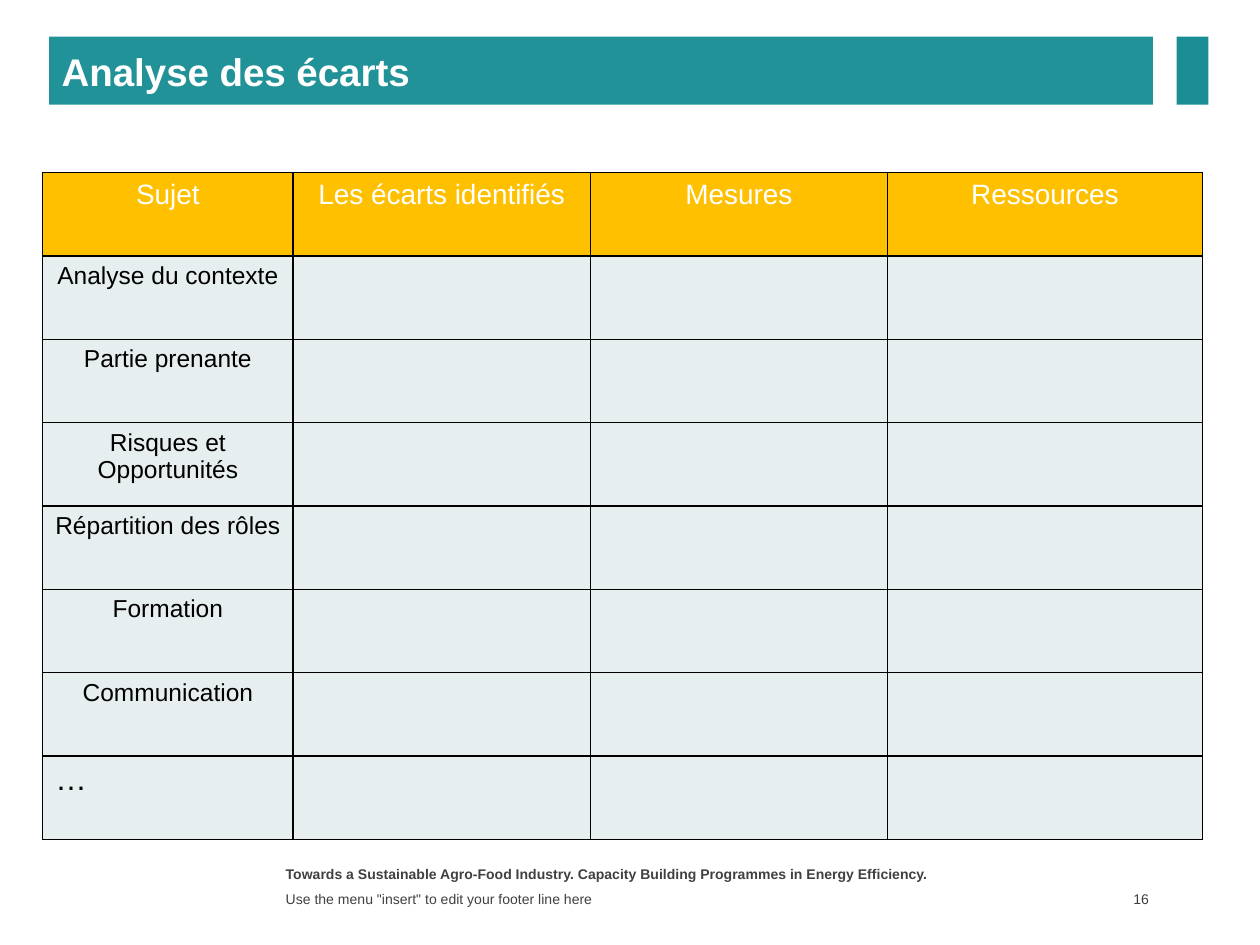
from lxml.etree import SubElement
from pptx import Presentation
from pptx.dml.color import RGBColor
from pptx.enum.shapes import MSO_SHAPE
from pptx.enum.text import MSO_ANCHOR, MSO_AUTO_SIZE, PP_ALIGN
from pptx.oxml.ns import qn
from pptx.util import Cm, Pt

TITLE = "Analyse des écarts"
HEADERS = ["Sujet", "Les écarts identifiés", "Mesures", "Ressources"]
SUBJECTS = ["Analyse du contexte", "Partie prenante", "Risques et Opportunités",
            "Répartition des rôles", "Formation", "Communication", "…"]
FOOTERS = [  # text, (left, top, width, height) in cm, bold, anchor, alignment, right inset
    ("Towards a Sustainable Agro-Food Industry. Capacity Building Programmes in Energy Efficiency.",
     (5.51, 17.32, 13.97, 0.53), True, MSO_ANCHOR.TOP, PP_ALIGN.LEFT, 0.25),
    ('Use the menu "insert" to edit your footer line here',
     (5.51, 17.88, 13.97, 0.48), False, MSO_ANCHOR.MIDDLE, PP_ALIGN.LEFT, 0.25),
    ("16", (21.84, 17.86, 1.42, 0.51), False, MSO_ANCHOR.MIDDLE, PP_ALIGN.RIGHT, 0.1),
]
BAND_TOP, BAND_HEIGHT = 0.74, 1.37
TABLE_LEFT, TABLE_TOP, ROW_HEIGHT = 0.86, 3.48, 1.68
COLUMN_WIDTHS = [5.05, 5.99, 5.99, 6.35]

FORMATS = {
    "title": {"size": Pt(22), "bold": True, "color": "FFFFFF"},
    "header": {"size": Pt(16), "bold": False, "color": "FFFFFF"},
    "subject": {"size": Pt(14), "bold": False, "color": "000000"},
    "ellipsis": {"size": Pt(18), "bold": False, "color": "000000"},
    "footer": {"size": Pt(8), "bold": False, "color": "404040"},
}


def rgb(hex_code):
    return RGBColor.from_string(hex_code)


def paint(target, hex_code):
    target.fill.solid()
    target.fill.fore_color.rgb = rgb(hex_code)


def write(frame, text, style, align=PP_ALIGN.LEFT, **changes):
    paragraph = frame.paragraphs[0]
    paragraph.text = text
    paragraph.alignment = align
    values = {"name": "Arial", **FORMATS[style], **changes}
    paragraph.font.color.rgb = rgb(values.pop("color"))
    for attribute, value in values.items():
        setattr(paragraph.font, attribute, value)


def place(shape, box):
    for side, length in zip(("left", "top", "width", "height"), box):
        setattr(shape, side, Cm(length))


def add_borders(cell):
    properties = cell._tc.get_or_add_tcPr()
    for side in ("a:lnL", "a:lnR", "a:lnT", "a:lnB"):
        border = SubElement(properties, qn(side), w=str(Pt(1)))
        SubElement(SubElement(border, qn("a:solidFill")), qn("a:srgbClr"), val="000000")


def add_title_band(slide):
    title = slide.shapes.title
    place(title, (0.99, BAND_TOP, 22.25, BAND_HEIGHT))
    paint(title, "209298")
    title.text_frame.auto_size = MSO_AUTO_SIZE.NONE
    title.text_frame.vertical_anchor = MSO_ANCHOR.MIDDLE
    write(title.text_frame, TITLE, "title")

    accent = slide.shapes.add_shape(
        MSO_SHAPE.RECTANGLE, Cm(23.72), Cm(BAND_TOP), Cm(0.64), Cm(BAND_HEIGHT))
    accent.shadow.inherit = False
    accent.line.fill.background()
    paint(accent, "1B8E95")


def add_gap_table(slide):
    rows = [HEADERS] + [[subject, "", "", ""] for subject in SUBJECTS]
    table = slide.shapes.add_table(
        len(rows), len(HEADERS), Cm(TABLE_LEFT), Cm(TABLE_TOP),
        Cm(sum(COLUMN_WIDTHS)), Cm(ROW_HEIGHT * len(rows))).table
    table.horz_banding = False
    for column, width in zip(table.columns, COLUMN_WIDTHS):
        column.width = Cm(width)
    for row, texts in zip(table.rows, rows):
        row.height = Cm(ROW_HEIGHT)
        is_header = texts is HEADERS
        for cell, text in zip(row.cells, texts):
            add_borders(cell)
            paint(cell, "FFC000" if is_header else "E7EEEF")
            if text == "…":
                write(cell.text_frame, text, "ellipsis")
            elif text:
                write(cell.text_frame, text, "header" if is_header else "subject",
                      PP_ALIGN.CENTER)


def add_footers(slide):
    for text, box, bold, anchor, align, right_inset in FOOTERS:
        footer = slide.shapes.add_textbox(*map(Cm, box))
        frame = footer.text_frame
        frame.word_wrap = True
        frame.vertical_anchor = anchor
        frame.margin_right = Cm(right_inset)
        write(frame, text, "footer", align, bold=bold)


def main():
    presentation = Presentation()
    presentation.slide_width, presentation.slide_height = Cm(25.4), Cm(19.05)
    slide = presentation.slides.add_slide(presentation.slide_layouts.get_by_name("Title Only"))
    add_title_band(slide)
    add_gap_table(slide)
    add_footers(slide)
    presentation.save("out.pptx")


if __name__ == "__main__":
    main()
